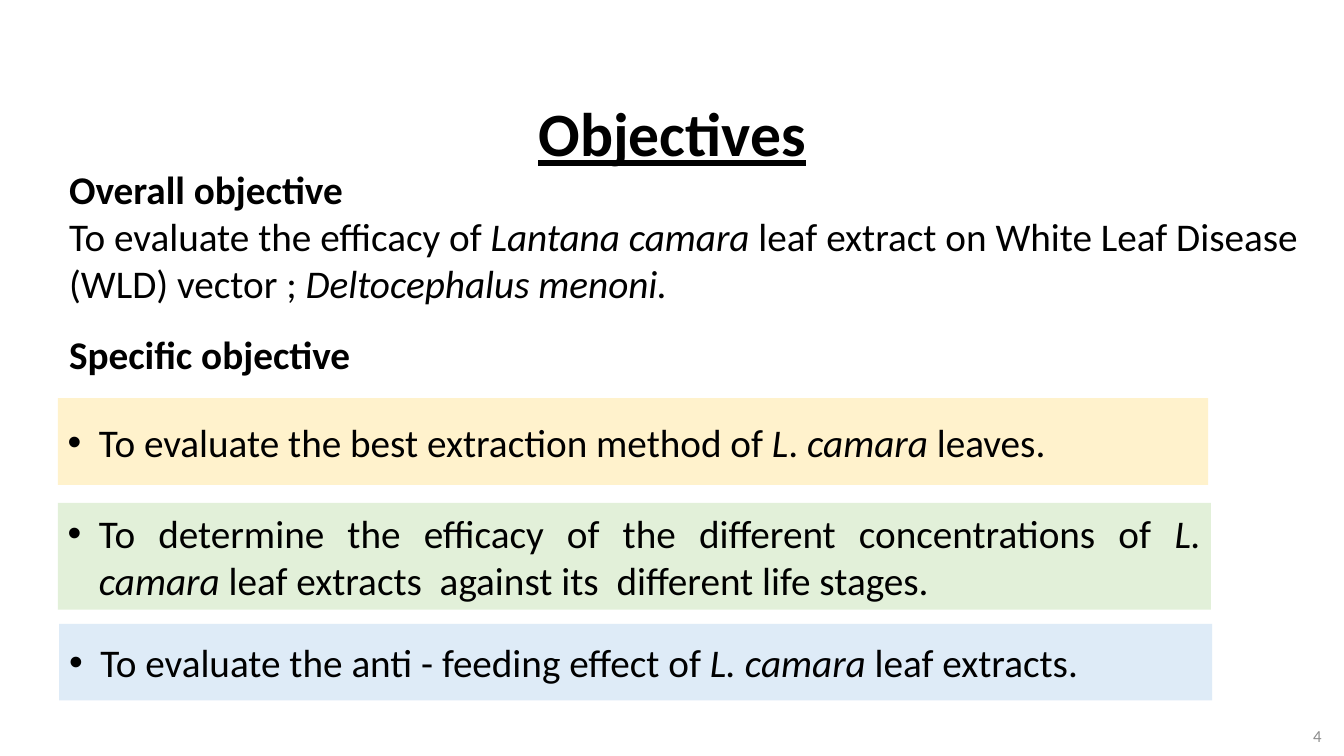
from dataclasses import dataclass

from lxml.etree import SubElement
from pptx import Presentation
from pptx.dml.color import RGBColor
from pptx.enum.shapes import MSO_SHAPE
from pptx.enum.text import MSO_ANCHOR, PP_ALIGN
from pptx.oxml.ns import qn
from pptx.util import Inches, Pt


@dataclass(frozen=True)
class Theme:
    font: str = "Calibri"
    text: str = "000000"
    muted: str = "8C8C8C"
    paper: str = "FFFFFF"
    yellow: str = "FFF2CC"
    green: str = "E2F0D9"
    blue: str = "DEEBF7"
    title_size: int = 44
    body_size: int = 28
    number_size: int = 12
    hanging: float = 0.31


THEME = Theme()
WIDTH, HEIGHT = Inches(13.33), Inches(7.5)
COLUMNS = ROWS = 100

BODY = {"name": THEME.font, "size": Pt(THEME.body_size)}
HEADING = {**BODY, "bold": True}
TITLE = {**HEADING, "size": Pt(THEME.title_size), "underline": True}
NUMBER = {**BODY, "size": Pt(THEME.number_size)}

# Runs alternate between upright and italic, starting upright
OVERALL = [
    "To evaluate the efficacy of ", "Lantana camara",
    " leaf extract on White Leaf Disease (WLD) vector ; ", "Deltocephalus menoni.",
]
# Box as (column, row, columns, rows), fill, runs
OBJECTIVES = [
    ((4.3, 52.67, 85.6, 11.47), THEME.yellow,
     ["To evaluate the best extraction method of ", "L", ". ", "camara", " leaves."]),
    ((4.3, 66.53, 85.8, 14.13), THEME.green,
     ["To determine the efficacy of the different concentrations of ", "L. camara",
      " leaf extracts  against its  different life stages. "]),
    ((4.4, 82.53, 85.8, 10.13), THEME.blue,
     ["To evaluate the anti - feeding effect of ", "L. camara", " leaf extracts."]),
]


def place(box):
    column, row, columns, rows = box
    return (round(column * WIDTH / COLUMNS), round(row * HEIGHT / ROWS),
            round(columns * WIDTH / COLUMNS), round(rows * HEIGHT / ROWS))


def write(paragraph, texts, format_values, color=THEME.text, align=PP_ALIGN.LEFT):
    paragraph.alignment = align
    for index, text in enumerate(texts):
        run = paragraph.add_run()
        run.text = text
        for name, value in {**format_values, "italic": index % 2 == 1}.items():
            setattr(run.font, name, value)
        run.font.color.rgb = RGBColor.from_string(color)


def add_label(slide, box, anchor=MSO_ANCHOR.MIDDLE):
    frame = slide.shapes.add_textbox(*place(box)).text_frame
    frame.word_wrap = True
    frame.vertical_anchor = anchor
    return frame


def add_panel(slide, box, fill):
    shape = slide.shapes.add_shape(MSO_SHAPE.RECTANGLE, *place(box))
    shape.shadow.inherit = False
    shape.fill.solid()
    shape.fill.fore_color.rgb = RGBColor.from_string(fill)
    shape.line.fill.background()
    frame = shape.text_frame
    frame.word_wrap = True
    frame.vertical_anchor = MSO_ANCHOR.MIDDLE
    return frame


def add_bullet(paragraph):
    properties = paragraph._p.get_or_add_pPr()
    properties.set("marL", str(Inches(THEME.hanging)))
    properties.set("indent", str(-Inches(THEME.hanging)))
    SubElement(properties, qn("a:buFont"), typeface="Arial")
    SubElement(properties, qn("a:buChar"), char="•")


def add_title(slide, box, text):
    paragraph = add_label(slide, box).paragraphs[0]
    paragraph.line_spacing = 1.5
    paragraph.space_after = Pt(8)
    write(paragraph, [text], TITLE, align=PP_ALIGN.CENTER)


def add_page_number(slide, box, text):
    paragraph = add_label(slide, box).paragraphs[0]
    write(paragraph, [text], NUMBER, THEME.muted, PP_ALIGN.RIGHT)


def add_overall_objective(slide, box):
    frame = add_panel(slide, box, THEME.paper)
    write(frame.paragraphs[0], ["Overall objective"], HEADING)
    write(frame.add_paragraph(), OVERALL, BODY)


def add_specific_heading(slide, box):
    frame = add_label(slide, box, MSO_ANCHOR.TOP)
    write(frame.paragraphs[0], ["Specific objective"], HEADING)


def add_specific_objective(slide, box, fill, texts):
    paragraph = add_panel(slide, box, fill).paragraphs[0]
    add_bullet(paragraph)
    write(paragraph, texts, BODY, align=PP_ALIGN.JUSTIFY)


def add_objectives_slide(presentation):
    slide = presentation.slides.add_slide(presentation.slide_layouts[6])
    # Title and page number
    add_title(slide, (6.9, 5.33, 86.25, 19.33), "Objectives")
    add_page_number(slide, (76.58, 94.67, 22.5, 5.33), "4")
    # Overall objective
    add_overall_objective(slide, (4.4, 22.27, 94.42, 17.87))
    # Specific objectives
    add_specific_heading(slide, (4.4, 43.07, 85.6, 7.6))
    for box, fill, texts in OBJECTIVES:
        add_specific_objective(slide, box, fill, texts)


def main():
    presentation = Presentation()
    presentation.slide_width, presentation.slide_height = WIDTH, HEIGHT
    add_objectives_slide(presentation)
    presentation.save("out.pptx")


if __name__ == "__main__":
    main()
